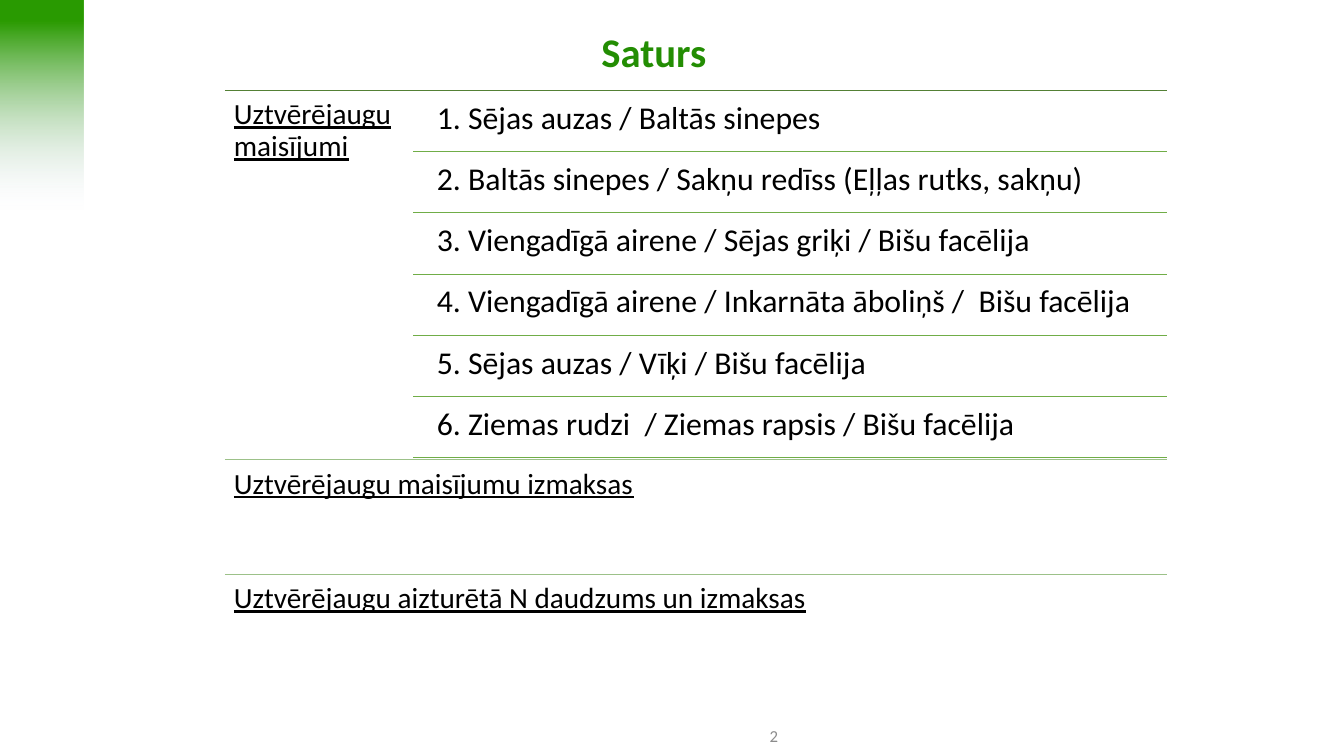
from lxml import etree
from pptx import Presentation
from pptx.dml.color import RGBColor
from pptx.enum import shapes, text
from pptx.oxml.ns import qn
from pptx.util import Inches, Pt

BLACK = RGBColor(0x00, 0x00, 0x00)
GRAY = RGBColor(0x8C, 0x8C, 0x8C)
TITLE_GREEN = RGBColor(0x23, 0x8D, 0x03)
BAND_GREEN = RGBColor(0x2A, 0x9B, 0x00)
BAND_FADE = RGBColor(0xE0, 0xE5, 0xF7)
DARK_RULE = RGBColor(0x53, 0x80, 0x35)
MIXTURE_RULE = RGBColor(0x70, 0xAD, 0x47)
PALE_RULE = RGBColor(0x9C, 0xC1, 0x89)

LEFT, RIGHT = 2.46, 12.76
MIXTURE_LEFT, MIXTURE_TEXT_LEFT = 4.52, 4.68
FIRST_MIXTURE_TOP, MIXTURE_HEIGHT = 1.02, 0.64
MIXTURE_PITCH = (5.00 - 1.66) / 5

MIXTURES = [
    "1. Sējas auzas / Baltās sinepes",
    "2. Baltās sinepes / Sakņu redīss (Eļļas rutks, sakņu)",
    "3. Viengadīgā airene / Sējas griķi / Bišu facēlija",
    "4. Viengadīgā airene / Inkarnāta āboliņš /  Bišu facēlija",
    "5. Sējas auzas / Vīķi / Bišu facēlija",
    "6. Ziemas rudzi  / Ziemas rapsis / Bišu facēlija",
]

# Heading, top, width, height, colour of the rule above
SECTIONS = [
    ("Uztvērējaugu maisījumi", 0.99, 2.06, 4.04, DARK_RULE),
    ("Uztvērējaugu maisījumu izmaksas", 5.03, 10.29, 1.25, PALE_RULE),
    ("Uztvērējaugu aizturētā N daudzums un izmaksas", 6.28, 10.29, 1.85, PALE_RULE),
]


def add_text(slide, wording, left, top, width, height, size, color=BLACK, wrap=True):
    box = slide.shapes.add_textbox(Inches(left), Inches(top), Inches(width), Inches(height))
    frame = box.text_frame
    frame.text = wording
    frame.word_wrap = wrap
    frame.auto_size = text.MSO_AUTO_SIZE.NONE
    paragraph = frame.paragraphs[0]
    font = paragraph.runs[0].font
    font.name = "Calibri"
    font.size = Pt(size)
    font.color.rgb = color
    return frame, paragraph, font


def add_list_text(slide, wording, left, top, width, height, size, underline=False):
    frame, paragraph, font = add_text(slide, wording, left, top, width, height, size)
    frame.margin_left = frame.margin_right = Inches(0.1)
    frame.margin_top = frame.margin_bottom = Inches(0.1)
    paragraph.line_spacing = 0.9
    if underline:
        font.underline = True


def add_rule(slide, left, top, color):
    rule = slide.shapes.add_connector(
        shapes.MSO_CONNECTOR.STRAIGHT, Inches(left), Inches(top), Inches(RIGHT), Inches(top))
    rule.line.color.rgb = color
    rule.line.width = Pt(0.5)
    etree.SubElement(rule.element.spPr, qn("a:effectLst"))


def add_fading_band(slide):
    band = slide.shapes.add_shape(
        shapes.MSO_SHAPE.RECTANGLE, 0, 0, Inches(0.91), Inches(2.29))
    band.shadow.inherit = False
    band.line.fill.background()
    band.fill.gradient()
    band.fill.gradient_angle = 270
    solid, faded = band.fill.gradient_stops
    solid.position, solid.color.rgb = 0.1, BAND_GREEN
    faded.position, faded.color.rgb = 1.0, BAND_FADE
    # Full transparency at the lower end
    fade_color = band.element.spPr.findall(".//" + qn("a:srgbClr"))[-1]
    etree.SubElement(fade_color, qn("a:alpha")).set("val", "0")


def add_section(slide, heading, top, width, height, rule_color):
    add_rule(slide, LEFT, top, rule_color)
    add_list_text(slide, heading, LEFT, top, width, height, 23, underline=True)


def add_mixture(slide, index, mixture):
    top = FIRST_MIXTURE_TOP + index * MIXTURE_PITCH
    add_list_text(slide, mixture, MIXTURE_TEXT_LEFT, top,
                  RIGHT - MIXTURE_TEXT_LEFT, MIXTURE_HEIGHT, 25)
    add_rule(slide, MIXTURE_LEFT, top + MIXTURE_HEIGHT, MIXTURE_RULE)


def main():
    presentation = Presentation()
    presentation.slide_width = Inches(14.7)
    presentation.slide_height = Inches(8.27)
    slide = presentation.slides.add_slide(presentation.slide_layouts[6])

    add_fading_band(slide)

    # Title
    _, _, title_font = add_text(
        slide, "Saturs", 6.48, 0.24, 1.36, 0.64, 32, TITLE_GREEN, wrap=False)
    title_font.bold = True

    # Contents
    for section in SECTIONS:
        add_section(slide, *section)
    for index, mixture in enumerate(MIXTURES):
        add_mixture(slide, index, mixture)

    # Slide number
    frame, paragraph, _ = add_text(slide, "2", 5.95, 7.83, 2.66, 0.44, 13.2, GRAY)
    frame.vertical_anchor = text.MSO_ANCHOR.MIDDLE
    paragraph.alignment = text.PP_ALIGN.RIGHT

    presentation.save("out.pptx")


if __name__ == "__main__":
    main()
